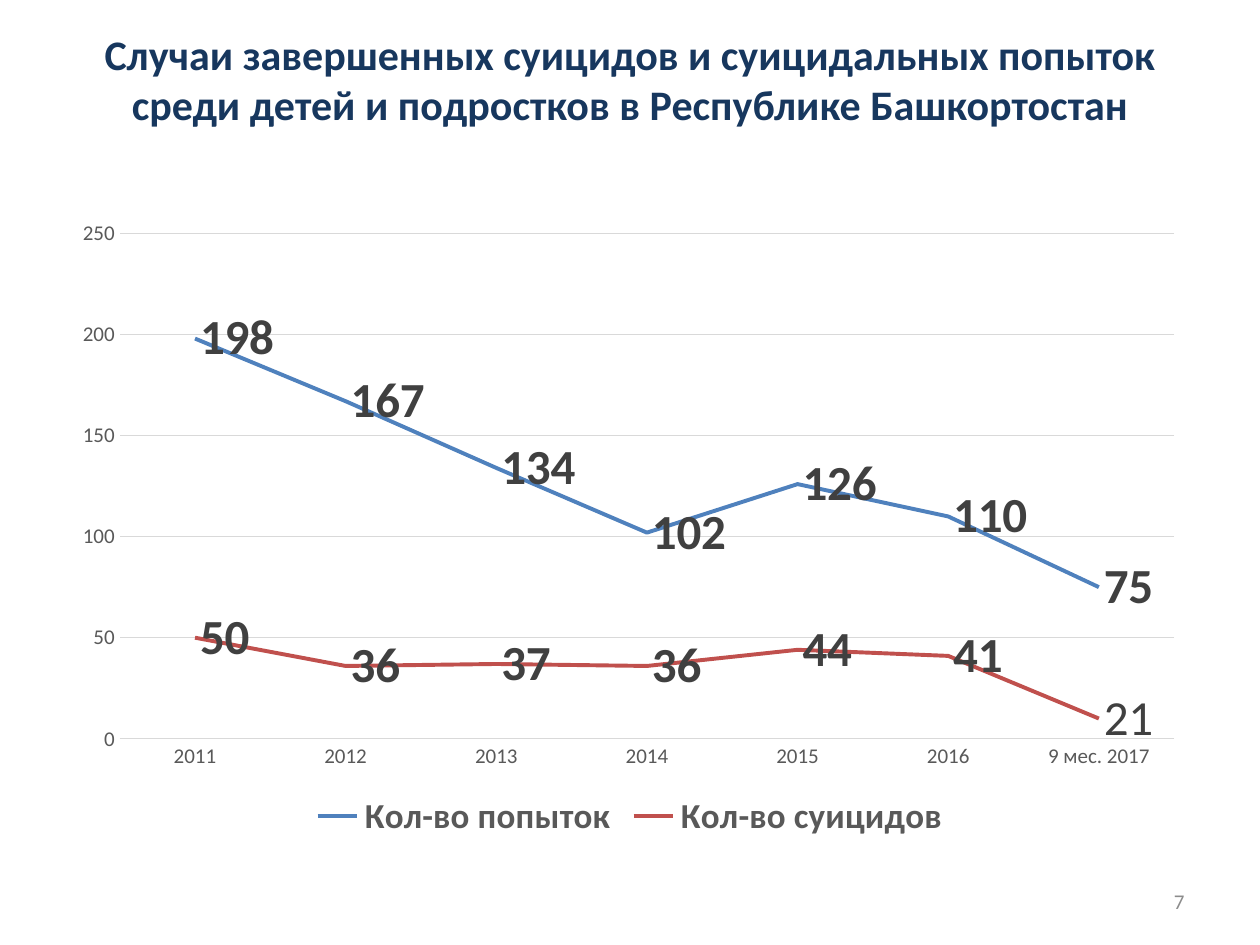
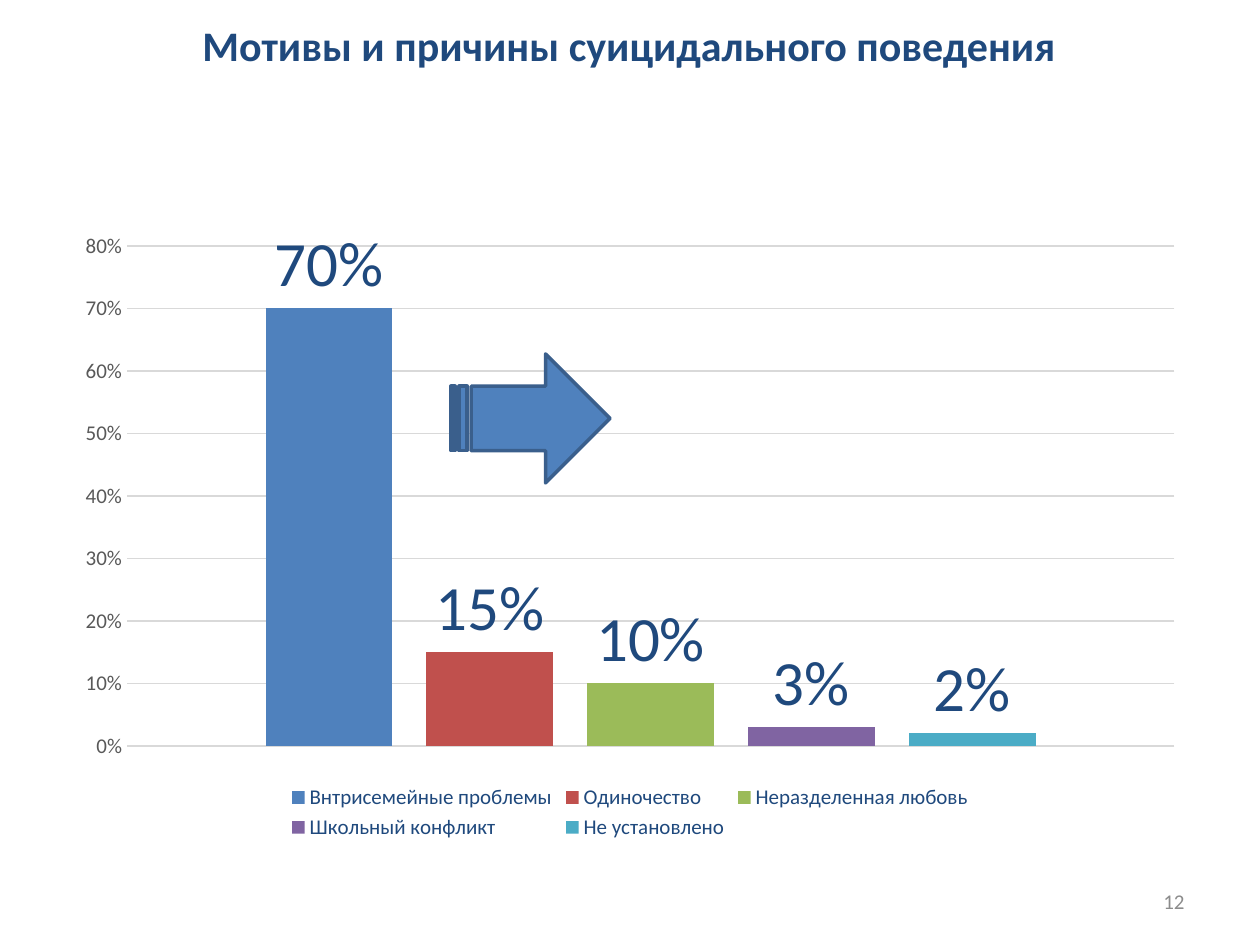
import pptx
import pptx.chart.data
import pptx.dml.color
import pptx.enum.chart
import pptx.enum.shapes
import pptx.enum.text
import pptx.oxml
import pptx.oxml.ns
import pptx.util

RGBColor = pptx.dml.color.RGBColor
NAVY = RGBColor(0x17, 0x37, 0x5E)
DARK_BLUE = RGBColor(0x1F, 0x49, 0x7D)
BLUE = RGBColor(0x4F, 0x81, 0xBD)
RED = RGBColor(0xC0, 0x50, 0x4D)
GREEN = RGBColor(0x9B, 0xBB, 0x59)
PURPLE = RGBColor(0x80, 0x64, 0xA2)
TEAL = RGBColor(0x4B, 0xAC, 0xC6)
ARROW_EDGE = RGBColor(0x3A, 0x5F, 0x8C)
LABEL_GRAY = RGBColor(0x40, 0x40, 0x40)
AXIS_GRAY = RGBColor(0x59, 0x59, 0x59)
GRID_GRAY = RGBColor(0xD9, 0xD9, 0xD9)
NUMBER_GRAY = RGBColor(0x8C, 0x8C, 0x8C)

FONT = "Calibri"
PX = 914400 / 126
CHART_AREA = (63, 221, 1134, 624)
NUMBER_AREA = (903, 876, 294, 50)
TITLE_ONLY = 5

YEARS = ["2011", "2012", "2013", "2014", "2015", "2016", "9 мес. 2017"]
CASES = [
    ("Кол-во попыток", [198, 167, 134, 102, 126, 110, 75], BLUE),
    ("Кол-во суицидов", [50, 36, 37, 36, 44, 41, 10], RED),
]
MOTIVES = [
    ("Внтрисемейные проблемы", [0.7], BLUE),
    ("Одиночество", [0.15], RED),
    ("Неразделенная любовь", [0.1], GREEN),
    ("Школьный конфликт", [0.03], PURPLE),
    ("Не установлено", [0.02], TEAL),
]


def emu(*lengths):
    """Turn px lengths into EMU."""
    return [pptx.util.Emu(round(length * PX)) for length in lengths]


def format_font(font, size, color, bold=False):
    font.name = FONT
    font.size = pptx.util.Pt(size)
    font.bold = bold
    font.color.rgb = color


def write_text(frame, text, *, size, color, bold=False, align=None):
    frame.word_wrap = True
    frame.vertical_anchor = pptx.enum.text.MSO_ANCHOR.MIDDLE
    para = frame.paragraphs[0]
    para.alignment = align
    span = para.add_run()
    span.text = text
    format_font(span.font, size, color, bold)


def add_page(deck, title, title_area, title_color, number):
    page = deck.slides.add_slide(deck.slide_layouts[TITLE_ONLY])
    heading = page.shapes.title
    heading.left, heading.top, heading.width, heading.height = emu(*title_area)
    write_text(heading.text_frame, title, size=24, color=title_color, bold=True,
               align=pptx.enum.text.PP_ALIGN.CENTER)
    box = page.shapes.add_textbox(*emu(*NUMBER_AREA))
    write_text(box.text_frame, str(number), size=12, color=NUMBER_GRAY,
               align=pptx.enum.text.PP_ALIGN.RIGHT)
    return page


def format_value_axis(axis, maximum, step, number_format):
    axis.minimum_scale = 0
    axis.maximum_scale = maximum
    axis.major_unit = step
    axis.major_tick_mark = pptx.enum.chart.XL_TICK_MARK.NONE
    axis.format.line.fill.background()
    axis.major_gridlines.format.line.color.rgb = GRID_GRAY
    axis.major_gridlines.format.line.width = pptx.util.Pt(0.75)
    axis.tick_labels.number_format = number_format
    axis.tick_labels.number_format_is_linked = False
    format_font(axis.tick_labels.font, 12, AXIS_GRAY)


def format_category_axis(axis):
    axis.major_tick_mark = pptx.enum.chart.XL_TICK_MARK.NONE
    axis.format.line.color.rgb = GRID_GRAY
    axis.format.line.width = pptx.util.Pt(0.75)
    format_font(axis.tick_labels.font, 12, AXIS_GRAY)


def add_chart(page, kind, categories, rows, number_format, maximum, step):
    """Add a chart with a bottom legend and a formatted value axis."""
    data = pptx.chart.data.CategoryChartData(number_format=number_format)
    data.categories = categories
    for name, values, _ in rows:
        data.add_series(name, values)
    chart = page.shapes.add_chart(kind, *emu(*CHART_AREA), data).chart
    chart.has_title = False
    chart.font.name = FONT
    chart.font.size = pptx.util.Pt(10)
    chart.has_legend = True
    chart.legend.position = pptx.enum.chart.XL_LEGEND_POSITION.BOTTOM
    chart.legend.include_in_layout = False
    chart.plots[0].vary_by_categories = False
    format_value_axis(chart.value_axis, maximum, step, number_format)
    return chart


def label_values(series, position, number_format, size, color, bold=False):
    labels = series.data_labels
    labels.show_value = True
    labels.position = position
    labels.number_format = number_format
    labels.number_format_is_linked = False
    format_font(labels.font, size, color, bold)


def place_plot(chart, x, y, w, h):
    """Fix the inner plot area, given as fractions of the chart."""
    plot_area = chart.plots[0]._element.getparent()
    for old in plot_area.findall(pptx.oxml.ns.qn("c:layout")):
        plot_area.remove(old)
    modes = '<c:layoutTarget val="inner"/><c:xMode val="edge"/><c:yMode val="edge"/>'
    sizes = f'<c:x val="{x}"/><c:y val="{y}"/><c:w val="{w}"/><c:h val="{h}"/>'
    plot_area.insert(0, pptx.oxml.parse_xml(
        f'<c:layout {pptx.oxml.ns.nsdecls("c")}><c:manualLayout>'
        f'{modes}{sizes}</c:manualLayout></c:layout>'))


def add_cases_chart(page):
    chart = add_chart(page, pptx.enum.chart.XL_CHART_TYPE.LINE, YEARS, CASES,
                      "General", 250, 50)
    place_plot(chart, 0.05, 0.02, 0.93, 0.81)
    format_category_axis(chart.category_axis)
    format_font(chart.legend.font, 20, AXIS_GRAY, bold=True)
    right = pptx.enum.chart.XL_LABEL_POSITION.RIGHT
    for series, (_, _, color) in zip(chart.plots[0].series, CASES):
        series.smooth = False
        series.format.line.color.rgb = color
        series.format.line.width = pptx.util.Pt(2.25)
        label_values(series, right, "General", 28, LABEL_GRAY, bold=True)
    last_label = chart.plots[0].series[1].points[len(YEARS) - 1].data_label
    span = last_label.text_frame.paragraphs[0].add_run()
    span.text = "21"
    format_font(span.font, 28, LABEL_GRAY)
    last_label.position = right


def add_motives_chart(page):
    chart = add_chart(page, pptx.enum.chart.XL_CHART_TYPE.COLUMN_CLUSTERED, ["1"],
                      MOTIVES, "0%", 0.8, 0.1)
    chart.category_axis.visible = False
    format_font(chart.legend.font, 12, DARK_BLUE)
    plot = chart.plots[0]
    plot.gap_width = 219
    plot.overlap = -27
    above = pptx.enum.chart.XL_LABEL_POSITION.OUTSIDE_END
    for series, (_, _, color) in zip(plot.series, MOTIVES):
        series.format.fill.solid()
        series.format.fill.fore_color.rgb = color
        label_values(series, above, "0%", 36, DARK_BLUE)


def add_striped_arrow(page, area):
    arrow = page.shapes.add_shape(
        pptx.enum.shapes.MSO_SHAPE.STRIPED_RIGHT_ARROW, *emu(*area))
    arrow.shadow.inherit = False
    arrow.fill.solid()
    arrow.fill.fore_color.rgb = BLUE
    arrow.line.color.rgb = ARROW_EDGE
    arrow.line.width = pptx.util.Pt(2)


def main():
    deck = pptx.Presentation()
    deck.slide_width, deck.slide_height = emu(1260, 945)

    cases_page = add_page(
        deck,
        "Случаи завершенных суицидов и суицидальных попыток "
        "среди детей и подростков в Республике Башкортостан",
        (63, 0, 1134, 158), NAVY, 7)
    add_cases_chart(cases_page)

    motives_page = add_page(deck, "Мотивы и причины суицидального поведения",
                            (62, 4, 1134, 82), DARK_BLUE, 12)
    add_motives_chart(motives_page)
    add_striped_arrow(motives_page, (451, 354, 159, 129))

    deck.save("out.pptx")


if __name__ == "__main__":
    main()
